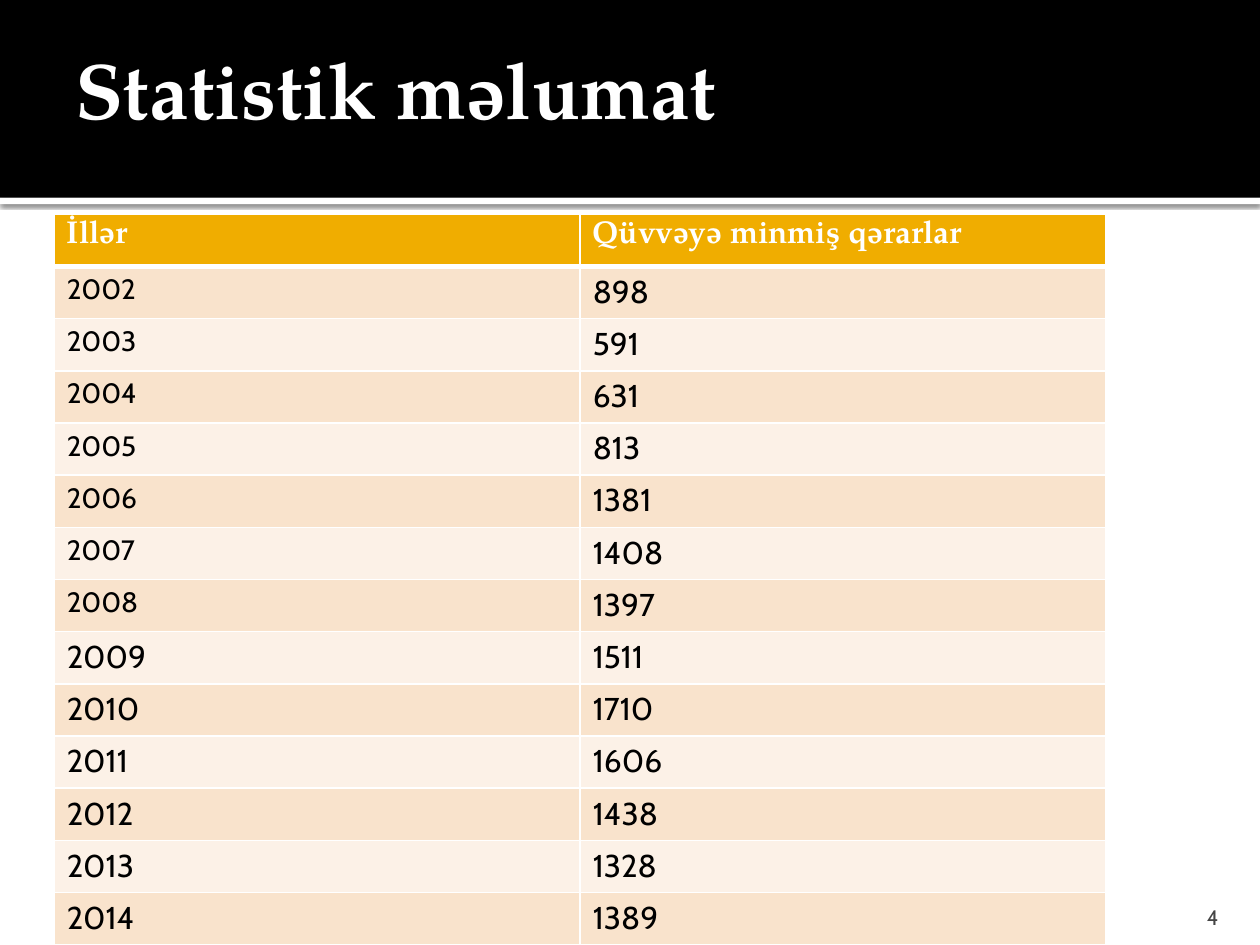
from lxml.etree import SubElement
from pptx import Presentation
from pptx.dml.color import RGBColor
from pptx.enum.shapes import MSO_SHAPE
from pptx.enum.text import MSO_ANCHOR, PP_ALIGN
from pptx.oxml import parse_xml
from pptx.oxml.ns import nsdecls, qn
from pptx.util import Inches, Pt

TITLE = "Statistik məlumat"
PAGE_NUMBER = "4"
HEADER = ("İllər", "Qüvvəyə minmiş qərarlar")
FIRST_YEAR = 2002
DECISIONS = [898, 591, 631, 813, 1381, 1408, 1397, 1511, 1710, 1606, 1438, 1328, 1389]
LAST_SMALL_YEAR = 2008  # years up to this one are set smaller

SERIF, SANS = "TeX Gyre Pagella", "Cabin"
COLORS = {
    "white": "FFFFFF", "black": "000000", "number": "454545",
    "header": "F0AD00", "odd": "F9E3CC", "even": "FCF1E7",
}
TABLE_BOX = (0.43, 1.7, 8.35, 5.8)


def rgb(name):
    return RGBColor.from_string(COLORS[name])


def write(tf, text, size, font, color, bold=False):
    tf.text = text
    f = tf.paragraphs[0].runs[0].font
    f.size, f.name, f.bold = Pt(size), font, bold
    f.color.rgb = rgb(color)


def add_bar(slide, top, height, color):
    s = slide.shapes.add_shape(
        MSO_SHAPE.RECTANGLE, 0, Inches(top), Inches(10), Inches(height))
    s.shadow.inherit = False
    s.fill.solid()
    s.fill.fore_color.rgb = rgb(color)
    s.line.fill.background()
    return s


def add_shadow(s):
    effects = s._element.spPr.find(qn("a:effectLst"))
    effects.append(parse_xml(
        f'<a:outerShdw {nsdecls("a")} blurRad="{Pt(2.5)}" dist="{Pt(0.8)}" dir="5400000">'
        f'<a:srgbClr val="{COLORS["black"]}"><a:alpha val="60000"/></a:srgbClr>'
        '</a:outerShdw>'))


def add_text(slide, box, margins, anchor, *style):
    tf = slide.shapes.add_textbox(*map(Inches, box)).text_frame
    tf.word_wrap = True
    tf.vertical_anchor = anchor
    tf.margin_left, tf.margin_top, tf.margin_right, tf.margin_bottom = map(Inches, margins)
    write(tf, *style)
    return tf


def set_borders(cell, bottom):
    """White borders, placed before the fill as the schema asks."""
    tcPr = cell._tc.get_or_add_tcPr()
    for i, (side, width) in enumerate((("L", 1), ("R", 1), ("T", 1), ("B", bottom))):
        ln = SubElement(tcPr, qn(f"a:ln{side}"), w=str(Pt(width)))
        fill = SubElement(ln, qn("a:solidFill"))
        SubElement(fill, qn("a:srgbClr"), val=COLORS["white"])
        tcPr.insert(i, ln)


def add_decisions_table(slide):
    rows = [HEADER] + [(FIRST_YEAR + i, n) for i, n in enumerate(DECISIONS)]
    table = slide.shapes.add_table(len(rows), 2, *map(Inches, TABLE_BOX)).table
    for r, row in enumerate(rows):
        for c, value in enumerate(row):
            cell = table.cell(r, c)
            cell.fill.solid()
            if r == 0:
                fill, style = "header", (18, SERIF, "white", True)
            else:
                small = c == 0 and value <= LAST_SMALL_YEAR
                fill = "odd" if r % 2 else "even"
                style = (16 if small else 18, SANS, "black")
            cell.fill.fore_color.rgb = rgb(fill)
            write(cell.text_frame, str(value), *style)
            # A header border is thick only on the side facing the data.
            set_borders(cell, bottom=3 if r == 0 else 1)


def main():
    prs = Presentation()
    prs.slide_width, prs.slide_height = Inches(10), Inches(7.5)
    slide = prs.slides.add_slide(prs.slide_layouts[6])

    add_shadow(add_bar(slide, 1.57, 0.05, "white"))
    add_bar(slide, 0, 1.57, "black")
    add_text(slide, (0.5, 0.17, 9, 1.06), (0.1, 0.05, 0.05, 0.05), MSO_ANCHOR.MIDDLE,
             TITLE, 45, SERIF, "white", True)
    number = add_text(slide, (8.97, 7.08, 0.8, 0.3), (0.1, 0.05, 0.1, 0), MSO_ANCHOR.BOTTOM,
                      PAGE_NUMBER, 12, SANS, "number")
    number.paragraphs[0].alignment = PP_ALIGN.RIGHT
    add_decisions_table(slide)

    prs.save("out.pptx")


if __name__ == "__main__":
    main()
